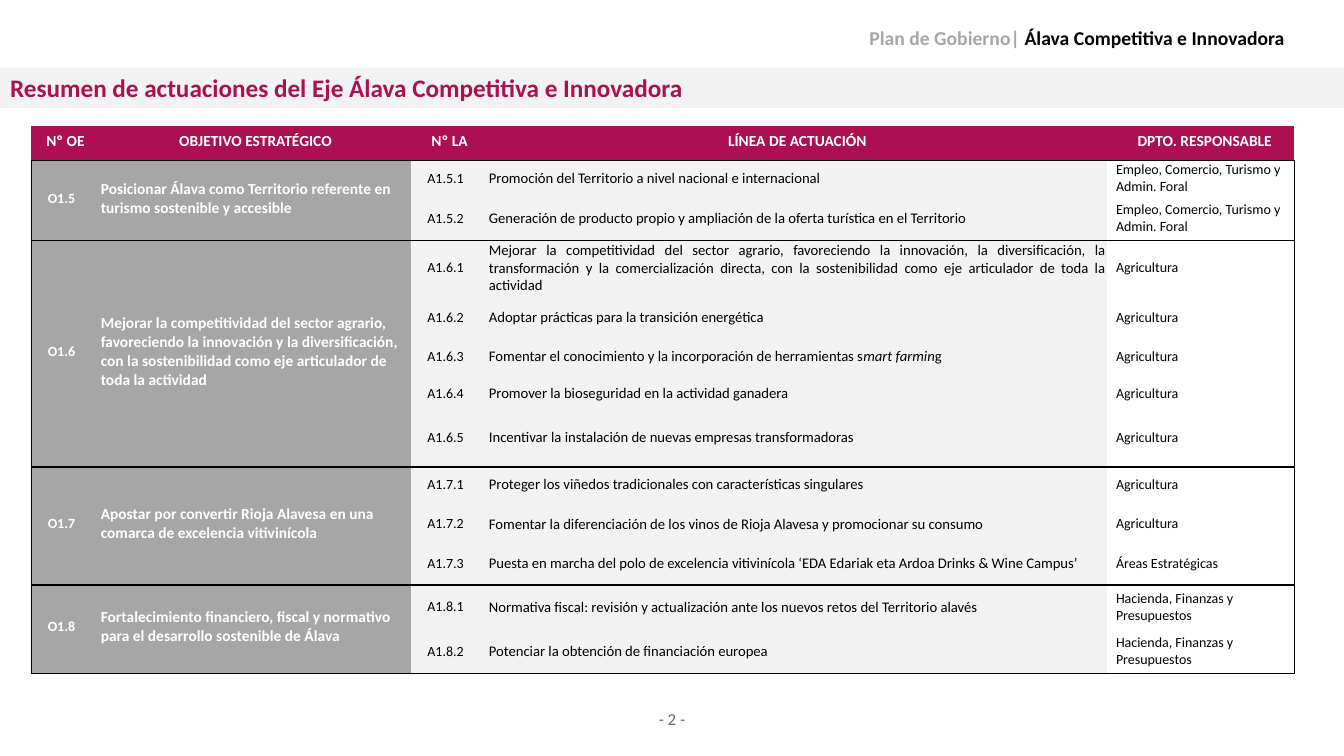
from dataclasses import dataclass
from pptx import Presentation
from pptx.dml.color import RGBColor as RGB
from pptx.enum.text import MSO_ANCHOR as Anchor, MSO_AUTO_SIZE as Fit, PP_ALIGN as Align
from pptx.oxml.ns import qn
from lxml.etree import SubElement as Sub
from pptx.util import Inches, Pt


@dataclass(frozen=True)
class Theme:
    face: str = "Calibri"
    wine: str = "AC1051"
    gray: str = "A6A6A6"
    pale: str = "F2F2F2"
    white: str = "FFFFFF"
    black: str = "000000"
    foot: str = "666666"
    title: float = 18
    head: float = 14
    page: float = 12
    goal: float = 11
    line: float = 10.5
    small: float = 10


T = Theme()
COLS = [0.6, 3.17, 0.68, 6.22, 1.86]
ROWS = [0.34, 0.34, 0.39, 0.49, 0.39, 0.39, 0.34, 0.54, 0.39, 0.39, 0.39, 0.48, 0.39]
HEADS = ["Nº OE", "OBJETIVO ESTRATÉGICO", "Nº LA", "LÍNEA DE ACTUACIÓN", "DPTO. RESPONSABLE"]
JOBS = "Empleo, Comercio, Turismo y Admin. Foral"
FARM = "Agricultura"
FUNDS = "Hacienda, Finanzas y Presupuestos"

# Goals in order from O1.5, each with its lines; asterisks enclose italics
GOALS = [
    ("Posicionar Álava como Territorio referente en turismo sostenible y accesible", [
        ("Promoción del Territorio a nivel nacional e internacional", JOBS),
        ("Generación de producto propio y ampliación de la oferta turística en el Territorio", JOBS)]),
    ("Mejorar la competitividad del sector agrario, favoreciendo la innovación y la "
     "diversificación, con la sostenibilidad como eje articulador de toda la actividad", [
        ("Mejorar la competitividad del sector agrario, favoreciendo la innovación, la "
         "diversificación, la transformación y la comercialización directa, con la "
         "sostenibilidad como eje articulador de toda la actividad", FARM),
        ("Adoptar prácticas para la transición energética", FARM),
        ("Fomentar el conocimiento y la incorporación de herramientas s*mart farmin*g", FARM),
        ("Promover la bioseguridad en la actividad ganadera", FARM),
        ("Incentivar la instalación de nuevas empresas transformadoras", FARM)]),
    ("Apostar por convertir Rioja Alavesa en una comarca de excelencia vitivinícola", [
        ("Proteger los viñedos tradicionales con características singulares", FARM),
        ("Fomentar la diferenciación de los vinos de Rioja Alavesa y promocionar su consumo", FARM),
        ("Puesta en marcha del polo de excelencia vitivinícola "
         "‘EDA Edariak eta Ardoa Drinks & Wine Campus’", "Áreas Estratégicas")]),
    ("Fortalecimiento financiero, fiscal y normativo para el desarrollo sostenible de Álava", [
        ("Normativa fiscal: revisión y actualización ante los nuevos retos del Territorio alavés", FUNDS),
        ("Potenciar la obtención de financiación europea", FUNDS)]),
]


def add_run(para, text, size, color, bold=False, italic=False):
    run = para.add_run()
    run.text = text
    look = {"name": T.face, "size": Pt(size), "bold": bold, "italic": italic}
    for key, val in look.items():
        setattr(run.font, key, val)
    run.font.color.rgb = RGB.from_string(color)


def set_frame(frame, align, anchor):
    form = {"word_wrap": True, "auto_size": Fit.NONE, "vertical_anchor": anchor}
    for key, val in form.items():
        setattr(frame, key, val)
    para = frame.paragraphs[0]
    para.alignment = align
    return para


def add_box(slide, area, align, anchor):
    box = slide.shapes.add_textbox(*map(Inches, area))
    return set_frame(box.text_frame, align, anchor)


def add_title(slide, text):
    title = slide.shapes.title
    place = {"left": 0, "top": 0.67, "width": 13.33, "height": 0.4}
    for key, val in place.items():
        setattr(title, key, Inches(val))
    title.fill.solid()
    title.fill.fore_color.rgb = RGB.from_string(T.pale)
    para = set_frame(title.text_frame, Align.LEFT, Anchor.TOP)
    para.space_after = Pt(6)
    add_run(para, text, T.title, T.wine, bold=True)


def style_cell(cell, fill, sides):
    """Give a cell its insets, its black sides and its fill."""
    form = {"margin_left": 0.01, "margin_right": 0.01, "margin_top": 0.01, "margin_bottom": 0.05}
    for key, val in form.items():
        setattr(cell, key, Inches(val))
    cell.vertical_anchor = Anchor.MIDDLE
    props = cell._tc.get_or_add_tcPr()
    for side in "LRTB":
        edge = Sub(props, qn("a:ln" + side), w=str(Pt(1)))
        if side in sides:
            paint = Sub(edge, qn("a:solidFill"))
            Sub(paint, qn("a:srgbClr"), val=T.black)
        else:
            Sub(edge, qn("a:noFill"))
    cell.fill.solid()
    cell.fill.fore_color.rgb = RGB.from_string(fill)


def fill_cell(cell, text, align, size, color, bold=False, indent=True):
    para = cell.text_frame.paragraphs[0]
    para.alignment = align
    if indent:
        props = para._p.get_or_add_pPr()
        props.set("marL", str(Inches(0.08)))
        props.set("indent", "0")
    for i, part in enumerate(text.split("*")):
        add_run(para, part, size, color, bold, italic=i % 2 == 1)


def add_goal(grid, top, num, goal, lines):
    """Write one goal, merged over the rows of its lines."""
    last = top + len(lines) - 1
    fills = [T.gray, T.gray, T.pale, T.pale, T.white]
    for row in range(top, last + 1):
        ends = ("T" if row == top else "") + ("B" if row == last else "")
        for col, fill in enumerate(fills):
            style_cell(grid.cell(row, col), fill, ends + {0: "L", 4: "R"}.get(col, ""))
    for col in (0, 1):
        head = grid.cell(top, col)
        head.merge(grid.cell(last, col))
        # The merged cell carries the lower edge of the group
        edge = head._tc.tcPr.find(qn("a:lnB"))
        edge.remove(edge[0])
        Sub(Sub(edge, qn("a:solidFill")), qn("a:srgbClr"), val=T.black)
    fill_cell(grid.cell(top, 0), f"O1.{num}", Align.CENTER, T.small, T.white, True, False)
    fill_cell(grid.cell(top, 1), goal, Align.LEFT, T.goal, T.white, True)
    for i, (line, dept) in enumerate(lines):
        row = top + i
        fill_cell(grid.cell(row, 2), f"A1.{num}.{i + 1}", Align.CENTER, T.small, T.black, indent=False)
        fill_cell(grid.cell(row, 3), line, Align.JUSTIFY, T.line, T.black)
        fill_cell(grid.cell(row, 4), dept, Align.LEFT, T.small, T.black)


def add_grid(slide):
    area = map(Inches, (0.31, 1.25, sum(COLS), sum(ROWS)))
    grid = slide.shapes.add_table(len(ROWS), len(COLS), *area).table
    grid.first_row = grid.horz_banding = False
    for col, wide in zip(grid.columns, COLS):
        col.width = Inches(wide)
    for row, high in zip(grid.rows, ROWS):
        row.height = Inches(high)
    for col, text in enumerate(HEADS):
        cell = grid.cell(0, col)
        style_cell(cell, T.wine, "B")
        fill_cell(cell, text, Align.CENTER, T.goal, T.white, True)
    top = 1
    for num, (goal, lines) in enumerate(GOALS, 5):
        add_goal(grid, top, num, goal, lines)
        top += len(lines)


def main():
    deck = Presentation()
    deck.slide_width, deck.slide_height = Inches(13.33), Inches(7.5)
    slide = deck.slides.add_slide(deck.slide_layouts[5])

    # Page number
    page = add_box(slide, (6.14, 6.98, 1.05, 0.3), Align.CENTER, Anchor.TOP)
    add_run(page, "- 2 -", T.page, T.foot)

    # Table and title band
    add_grid(slide)
    add_title(slide, "Resumen de actuaciones del Eje Álava Competitiva e Innovadora")

    # Running head
    head = add_box(slide, (8.15, 0.15, 4.69, 0.45), Align.RIGHT, Anchor.MIDDLE)
    add_run(head, "Plan de Gobierno| ", T.head, T.gray, bold=True)
    add_run(head, "Álava Competitiva e Innovadora", T.head, T.black, bold=True)

    deck.save("out.pptx")


if __name__ == "__main__":
    main()
